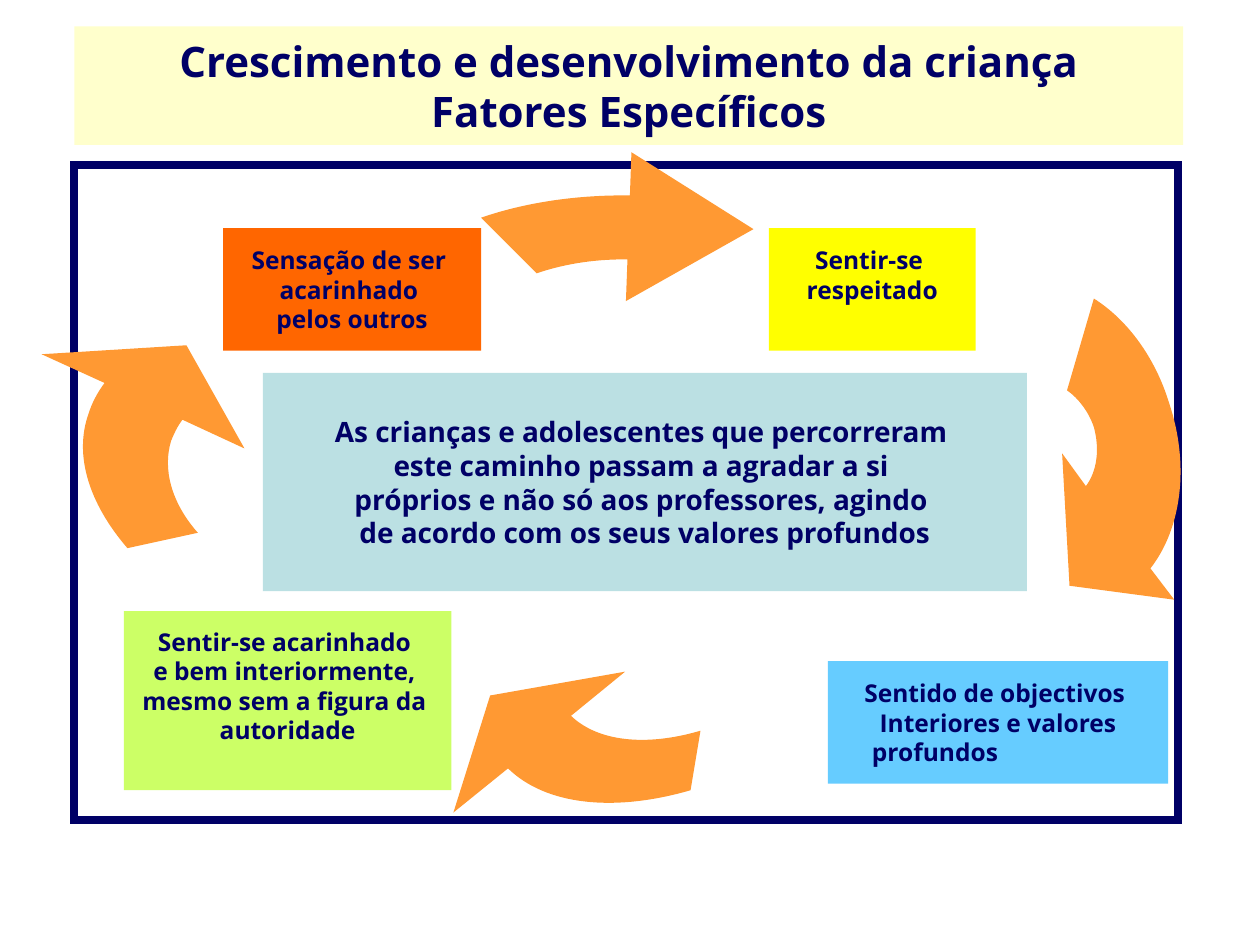
from math import cos, radians, sin

from lxml.etree import SubElement
from pptx import Presentation
from pptx.dml.color import RGBColor
from pptx.enum.shapes import MSO_SHAPE as Preset
from pptx.enum.text import MSO_ANCHOR as Anchor, MSO_AUTO_SIZE as AutoSize, PP_ALIGN as Align
from pptx.oxml.ns import qn
from pptx.util import Cm, Pt

NAVY = RGBColor(0x00, 0x00, 0x66)
CREAM = RGBColor(0xFF, 0xFF, 0xCC)
ORANGE = RGBColor(0xFF, 0x66, 0x00)
YELLOW = RGBColor(0xFF, 0xFF, 0x00)
SKY = RGBColor(0x66, 0xCC, 0xFF)
LIME = RGBColor(0xCC, 0xFF, 0x66)
TEAL = RGBColor(0xBB, 0xE0, 0xE3)
ARROW = RGBColor(0xFF, 0x99, 0x33)
FONT = "Open Sans"
LINE_HEIGHT = 0.6

# Each arrow: frame in cm, rotation in degrees, outline in cm on the page.
# In an outline a pair is a corner, six numbers are a Bézier curve.
ARROWS = [
    ((6.91, 3.94, 11.35, 6.73), 0, [
        (12.65, 5.23), (12.62, 5.23, 12.6, 5.23, 12.57, 5.23),
        (11.94, 5.23, 11.35, 5.33, 10.82, 5.51), (9.7, 4.39),
        (10.57, 4.09, 11.56, 3.94, 12.57, 3.94),
        (12.6, 3.94, 12.65, 3.94, 12.7, 3.94),
        (12.73, 3.07), (15.19, 4.62), (12.62, 6.07)]),
    ((17.83, 6.4, 6.73, 4.98), 72, [
        (21.89, 9.8), (22.12, 9.5, 22.17, 9.04, 22.05, 8.61),
        (21.95, 8.31, 21.74, 8.03, 21.51, 7.87), (22.05, 6.02),
        (22.73, 6.45, 23.29, 7.21, 23.57, 8.13),
        (23.98, 9.35, 23.83, 10.64, 23.19, 11.46),
        (23.67, 12.09), (21.56, 11.81), (21.41, 9.14)]),
    ((8.92, 8.53, 11.33, 6.73), 144, [
        (11.51, 14.43), (12.04, 14.94, 13, 15.06, 14.12, 14.73),
        (13.92, 15.93), (12.37, 16.38, 11, 16.23, 10.24, 15.49),
        (9.14, 16.38), (9.88, 14.02), (12.6, 13.54)]),
    ((3.78, 4.42, 6.73, 11.33), 288, [
        (3.68, 8.46), (3.58, 8.59, 3.51, 8.74, 3.45, 8.89),
        (3.28, 9.45, 3.45, 10.13, 3.99, 10.74), (2.57, 11.05),
        (1.78, 10.13, 1.5, 9.17, 1.78, 8.36),
        (1.85, 8.13, 1.96, 7.92, 2.11, 7.72),
        (0.84, 7.14), (3.76, 6.96), (4.93, 9.04)]),
]


def add_span(para, text, size):
    span = para.add_run()
    span.text = text
    span.font.name = FONT
    span.font.size = Pt(size)
    span.font.bold = True
    span.font.color.rgb = NAVY


def paint(shape, color):
    shape.fill.solid()
    shape.fill.fore_color.rgb = color
    shape.line.fill.background()
    shape.shadow.inherit = False


def place(shape, lengths):
    shape.left, shape.top, shape.width, shape.height = (Cm(length) for length in lengths)


def add_title(page):
    title = page.shapes.title
    place(title, (1.5, 0.53, 22.35, 2.39))
    title.fill.solid()
    title.fill.fore_color.rgb = CREAM
    frame = title.text_frame
    frame.auto_size = AutoSize.NONE
    frame.word_wrap = True
    frame.vertical_anchor = Anchor.MIDDLE
    para = frame.paragraphs[0]
    para.alignment = Align.CENTER
    add_span(para, "Crescimento e desenvolvimento da criança", 24)
    para.add_line_break()
    add_span(para, "Fatores Específicos", 24)


def add_border(page):
    border = page.shapes.add_shape(Preset.RECTANGLE, Cm(1.5), Cm(3.33), Cm(22.25), Cm(13.21))
    border.fill.background()
    border.line.color.rgb = NAVY
    border.line.width = Pt(4.5)
    border.shadow.inherit = False
    SubElement(border.line._get_or_add_ln(), qn("a:miter"), lim="800000")


def to_local(point, frame, angle):
    """Turn a page point in cm into the coordinates of a rotated frame."""
    left, top, width, height = frame
    dx = point[0] - left - width / 2
    dy = point[1] - top - height / 2
    turn = radians(angle)
    return (Cm(width / 2 + dx * cos(turn) + dy * sin(turn)),
            Cm(height / 2 - dx * sin(turn) + dy * cos(turn)))


def add_arrow(page, frame, angle, outline):
    """Build the corners as a freeform, then draw its true curves in the frame."""
    corners = [tuple(Cm(length) for length in segment[-2:]) for segment in outline]
    builder = page.shapes.build_freeform(*corners[0])
    builder.add_line_segments(corners[1:], close=True)
    arrow = builder.convert_to_shape()
    place(arrow, frame)
    arrow.rotation = angle
    paint(arrow, ARROW)

    trace = arrow._element.find(".//" + qn("a:path"))
    for child in list(trace):
        trace.remove(child)
    trace.set("w", str(arrow.width))
    trace.set("h", str(arrow.height))
    for index, segment in enumerate(outline):
        tag = "a:cubicBezTo" if len(segment) == 6 else "a:lnTo" if index else "a:moveTo"
        command = SubElement(trace, qn(tag))
        for point in zip(segment[::2], segment[1::2]):
            x, y = to_local(point, frame, angle)
            SubElement(command, qn("a:pt"), x=str(x), y=str(y))
    SubElement(trace, qn("a:close"))


def add_box(page, lengths, color, lines, size=14, bottom=0):
    box = page.shapes.add_shape(Preset.RECTANGLE, *(Cm(length) for length in lengths))
    paint(box, color)
    frame = box.text_frame
    frame.word_wrap = False
    frame.vertical_anchor = Anchor.MIDDLE
    frame.margin_left = frame.margin_right = frame.margin_top = 0
    frame.margin_bottom = Cm(bottom)
    for index, line in enumerate(lines):
        para = frame.add_paragraph() if index else frame.paragraphs[0]
        para.alignment = Align.CENTER
        add_span(para, line, size)
    return box


def main():
    deck = Presentation()
    deck.slide_width, deck.slide_height = Cm(25.4), Cm(19.05)
    page = deck.slides.add_slide(deck.slide_layouts[5])

    add_title(page)
    add_border(page)
    for frame, angle, outline in ARROWS:
        add_arrow(page, frame, angle, outline)

    add_box(page, (15.5, 4.6, 4.17, 2.47), YELLOW,
            ["Sentir-se ", "respeitado"], bottom=LINE_HEIGHT)
    goals = add_box(page, (16.69, 13.33, 6.86, 2.47), SKY,
                    ["Sentido de objectivos ", "Interiores e valores", "profundos"])
    last_line = goals.text_frame.paragraphs[-1]
    last_line._p.get_or_add_pPr().set("marR", str(Cm(2.54)))
    add_box(page, (2.5, 12.32, 6.6, 3.61), LIME,
            ["Sentir-se acarinhado ", "e bem interiormente, ",
             "mesmo sem a figura da ", "autoridade"], bottom=LINE_HEIGHT)
    add_box(page, (4.5, 4.6, 5.2, 2.47), ORANGE,
            ["Sensação de ser ", "acarinhado ", "pelos outros"])
    add_box(page, (5.3, 7.52, 15.4, 4.4), TEAL,
            ["As crianças e adolescentes que percorreram ",
             "este caminho passam a agradar a si ",
             "próprios e não só aos professores, agindo ",
             "de acordo com os seus valores profundos"], size=16)

    deck.save("out.pptx")


if __name__ == "__main__":
    main()
